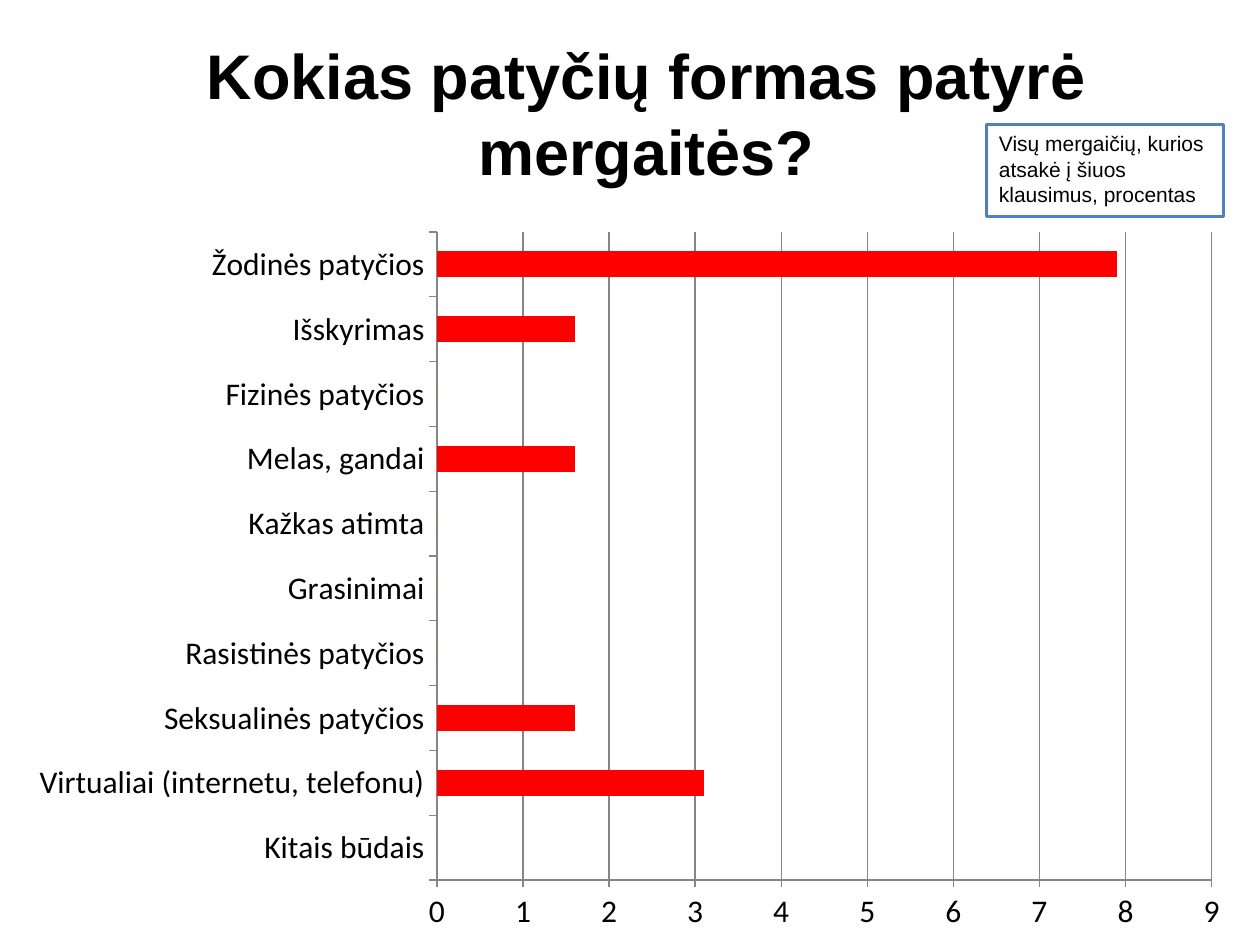
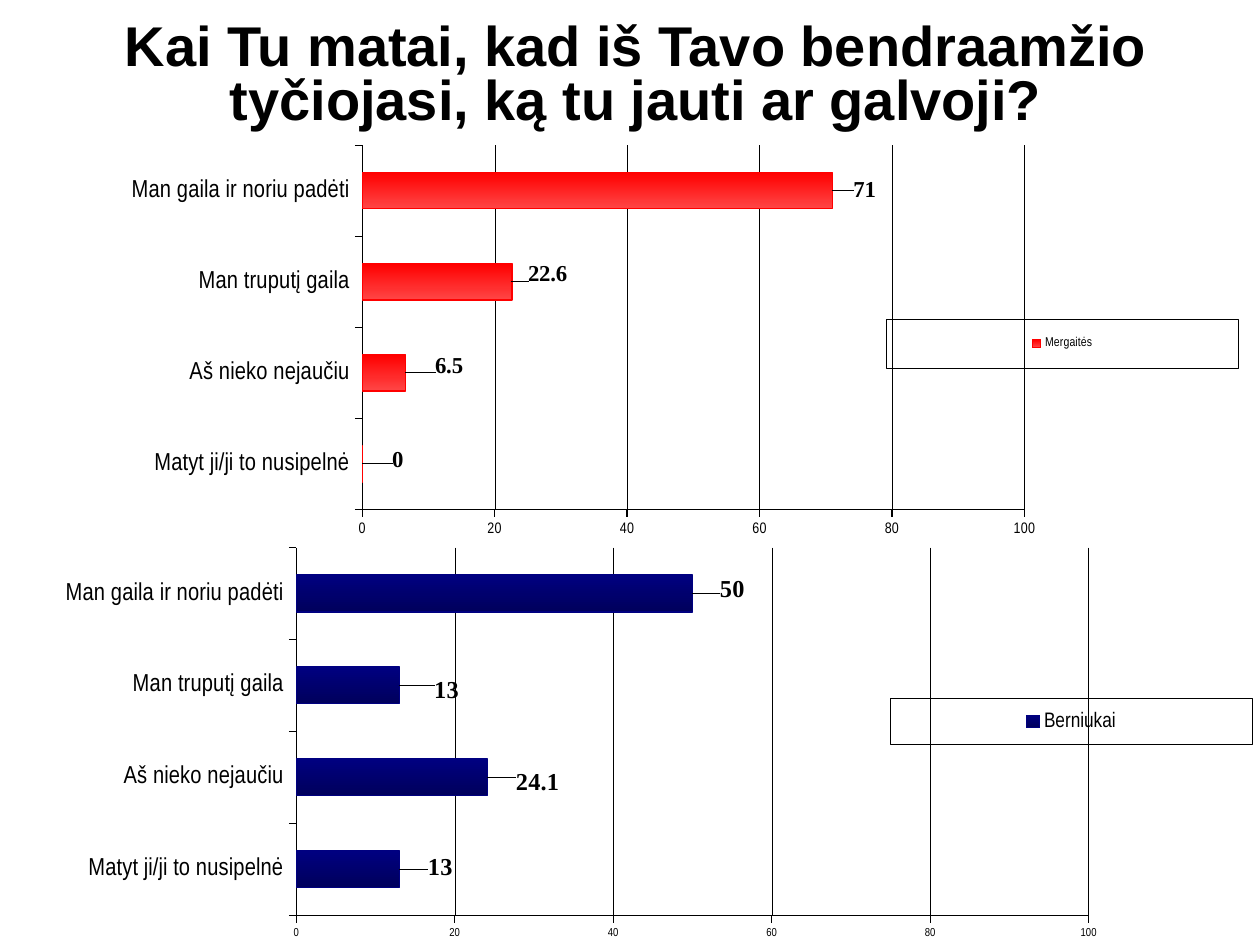
from dataclasses import dataclass

from pptx import Presentation
from pptx.chart.data import CategoryChartData
from pptx.dml.color import RGBColor
from pptx.enum.chart import (XL_CHART_TYPE, XL_LABEL_POSITION, XL_LEGEND_POSITION,
                             XL_TICK_LABEL_POSITION, XL_TICK_MARK)
from pptx.enum.shapes import MSO_SHAPE
from pptx.enum.text import MSO_ANCHOR, MSO_AUTO_SIZE, PP_ALIGN
from pptx.oxml import parse_xml
from pptx.oxml.ns import nsdecls, qn
from pptx.util import Inches, Pt

BAR = XL_CHART_TYPE.BAR_CLUSTERED
OUTSIDE_END = XL_LABEL_POSITION.OUTSIDE_END
RIGHT = XL_LEGEND_POSITION.RIGHT
LOW = XL_TICK_LABEL_POSITION.LOW
TICK_OUT, TICK_NONE = XL_TICK_MARK.OUTSIDE, XL_TICK_MARK.NONE
RECT = MSO_SHAPE.RECTANGLE
TOP, MIDDLE = MSO_ANCHOR.TOP, MSO_ANCHOR.MIDDLE
LEFT, CENTER = PP_ALIGN.LEFT, PP_ALIGN.CENTER
NO_AUTOFIT = MSO_AUTO_SIZE.NONE

SLIDE_W, SLIDE_H = Inches(10), Inches(7.5)
COLS, ROWS = 100, 75
TITLE_ONLY = 5


@dataclass(frozen=True)
class Theme:
    ink: str = "000000"
    paper: str = "FFFFFF"
    frame: str = "4F81BD"
    axis: str = "868686"
    girls: str = "FF0000"
    girls_end: str = "FF4646"
    boys: str = "000080"
    boys_end: str = "00005C"
    face: str = "Arial"
    chart_face: str = "Calibri"
    axis_face: str = "Arial Narrow"
    label_face: str = "Times New Roman"
    title: float = 36
    long_title: float = 32
    note: float = 12
    chart: float = 18
    category: float = 14


T = Theme()


# Shared helpers
def grid(left, top, width, height):
    """Turn columns and rows of the slide grid into lengths."""
    return [int(n * size / count) for n, size, count in
            ((left, SLIDE_W, COLS), (top, SLIDE_H, ROWS),
             (width, SLIDE_W, COLS), (height, SLIDE_H, ROWS))]


def rgb(color):
    return RGBColor.from_string(color)


def set_attrs(obj, **values):
    for name, value in values.items():
        setattr(obj, name, value)


def set_font(font, face, size, bold=False):
    set_attrs(font, name=face, size=Pt(size), bold=bold)
    font.color.rgb = rgb(T.ink)


def set_line(line, color, width):
    line.color.rgb = rgb(color)
    line.width = Pt(width)


def write(sp, text, size, align, anchor, bold=False, spacing=None):
    tf = sp.text_frame
    set_attrs(tf, word_wrap=True, auto_size=NO_AUTOFIT, vertical_anchor=anchor)
    p = tf.paragraphs[0]
    set_attrs(p, alignment=align, line_spacing=spacing)
    r = p.add_run()
    r.text = text
    set_font(r.font, T.face, size, bold)


def manual_layout(x, y, w=None, h=None, inner=False):
    """Chart layout from percentages; without a size it is an offset."""
    parts = ['<c:layoutTarget val="inner"/>'] if inner else []
    if w is not None:
        parts += ['<c:xMode val="edge"/>', '<c:yMode val="edge"/>']
    parts += [f'<c:{tag} val="{value / 100:.4f}"/>'
              for tag, value in zip("xywh", (x, y, w, h)) if value is not None]
    return parse_xml(f'<c:layout {nsdecls("c")}><c:manualLayout>{"".join(parts)}'
                     '</c:manualLayout></c:layout>')


# Title and note
def add_title(s, text, box, size, spacing=None):
    sp = s.shapes.title
    sp.left, sp.top, sp.width, sp.height = grid(*box)
    write(sp, text, size, CENTER, MIDDLE, True, spacing)


def add_note(s, text, box):
    sp = s.shapes.add_shape(RECT, *grid(*box))
    sp.shadow.inherit = False
    sp.fill.solid()
    sp.fill.fore_color.rgb = rgb(T.paper)
    set_line(sp.line, T.frame, 2)
    write(sp, text, T.note, LEFT, TOP)


# Bar chart with its axes
def add_bars(s, box, name, rows, plot_area, top_value, step, line, width):
    """Draw rows from top to bottom; the chart itself counts from the bottom."""
    data = CategoryChartData()
    data.categories = [label for label, _ in reversed(rows)]
    data.add_series(name, [value for _, value in reversed(rows)])
    chart = s.shapes.add_chart(BAR, *grid(*box), data).chart
    set_attrs(chart, has_title=False, has_legend=False)
    set_attrs(chart.plots[0], gap_width=150, vary_by_categories=False)

    for axis in (chart.category_axis, chart.value_axis):
        set_attrs(axis, major_tick_mark=TICK_OUT, minor_tick_mark=TICK_NONE)
        set_line(axis.format.line, line, width)
    axis = chart.value_axis
    set_attrs(axis, minimum_scale=0, maximum_scale=top_value, major_unit=step,
              has_major_gridlines=True)
    set_line(axis.major_gridlines.format.line, line, width)

    root = chart.element if hasattr(chart, "element") else chart._chartSpace
    body = root.find(qn("c:chart"))
    body.addnext(parse_xml(f'<c:spPr {nsdecls("c", "a")}><a:noFill/>'
                           '<a:ln><a:noFill/></a:ln></c:spPr>'))
    area = body.find(qn("c:plotArea"))
    for old in area.findall(qn("c:layout")):
        area.remove(old)
    area.insert(0, manual_layout(*plot_area, inner=True))
    return chart


# Labelled group chart: gradient bars, moved labels, framed legend
def add_group_chart(s, group):
    chart = add_bars(s, group["box"], group["name"],
                     list(zip(FEELINGS, group["values"])), group["plot"],
                     100, 20, T.ink, 0.2)
    set_font(chart.font, T.label_face, group["label_size"], True)
    cat, val = chart.category_axis, chart.value_axis
    cat.tick_label_position = LOW
    set_font(cat.tick_labels.font, T.axis_face, T.category)
    set_font(val.tick_labels.font, T.axis_face, group["scale_size"])
    set_line(val.format.line, T.ink, 0.75)

    ser = chart.plots[0].series[0]
    fill = ser.format.fill
    fill.gradient()
    fill.gradient_angle = 270
    for stop, color in zip(fill.gradient_stops, group["colors"]):
        stop.color.rgb = rgb(color)
    set_line(ser.format.line, group["colors"][0], 0.75)

    for i, shift in enumerate(reversed(group["label_shifts"])):
        label = ser.points[i].data_label
        label.position = OUTSIDE_END
        set_font(label.font, T.label_face, group["label_size"], True)
    for d_lbl, shift in zip(ser._element.iter(qn("c:dLbl")),
                            reversed(group["label_shifts"])):
        d_lbl.find(qn("c:idx")).addnext(manual_layout(*shift))

    chart.has_legend = True
    legend = chart.legend
    set_attrs(legend, position=RIGHT, include_in_layout=False)
    set_font(legend.font, T.axis_face, group["legend_size"])
    el = legend._element
    for old in el.findall(qn("c:layout")):
        el.remove(old)
    el.find(qn("c:legendPos")).addnext(manual_layout(*group["legend"]))
    el.find(qn("c:overlay")).addnext(parse_xml(
        f'<c:spPr {nsdecls("c", "a")}><a:noFill/><a:ln w="2540"><a:solidFill>'
        f'<a:srgbClr val="{T.ink}"/></a:solidFill></a:ln></c:spPr>'))


# Content
BULLYING_FORMS = [
    ("Žodinės patyčios", 7.9), ("Išskyrimas", 1.6), ("Fizinės patyčios", 0),
    ("Melas, gandai", 1.6), ("Kažkas atimta", 0), ("Grasinimai", 0),
    ("Rasistinės patyčios", 0), ("Seksualinės patyčios", 1.6),
    ("Virtualiai (internetu, telefonu)", 3.1), ("Kitais būdais", 0),
]
FEELINGS = ["Man gaila ir noriu padėti", "Man truputį gaila",
            "Aš nieko nejaučiu", "Matyt ji/ji to nusipelnė"]
GROUPS = [
    dict(name="Berniukai", values=[50, 13, 24.1, 13], box=(0.4, 41.8, 99.2, 33.2),
         plot=(23.3, 5, 63.4, 87.9), legend=(70.8, 41.1, 29, 11),
         colors=(T.boys, T.boys_end), label_size=13.9, scale_size=6.6, legend_size=12,
         label_shifts=[(1.8, -1.2), (2.4, 1), (1.9, 1), (1.9, -0.5)]),
    dict(name="Mergaitės", values=[71, 22.6, 6.5, 0], box=(0, 11.5, 98.8, 31.2),
         plot=(29.1, 0, 53.2, 92.8), legend=(71.2, 44.3, 28.3, 12.5),
         colors=(T.girls, T.girls_end), label_size=13, scale_size=8.7, legend_size=7.3,
         label_shifts=[(1.3, 0), (0.9, -2), (2, -1.8), (2, -1)]),
]


# Slides
def forms_slide(prs):
    s = prs.slides.add_slide(prs.slide_layouts[TITLE_ONLY])
    add_title(s, "Kokias patyčių formas patyrė mergaitės?", (14.6, 0, 73.4, 17.8), T.title)
    add_note(s, "Visų mergaičių, kurios atsakė į šiuos klausimus, procentas",
             (78.3, 9.9, 18.8, 7.3))
    chart = add_bars(s, (1.2, 17.2, 97.6, 57.8), "Series 1", BULLYING_FORMS,
                     (34.3, 2.1, 63, 89), 9, 1, T.axis, 0.75)
    set_font(chart.font, T.chart_face, T.chart)
    fill = chart.plots[0].series[0].format.fill
    fill.solid()
    fill.fore_color.rgb = rgb(T.girls)


def feelings_slide(prs):
    s = prs.slides.add_slide(prs.slide_layouts[TITLE_ONLY])
    add_title(s, "Kai Tu matai, kad iš Tavo bendraamžio tyčiojasi, ką tu jauti ar galvoji?",
              (5.9, 0, 89.2, 12.3), T.long_title, 0.8)
    for group in GROUPS:
        add_group_chart(s, group)


def main():
    prs = Presentation()
    set_attrs(prs, slide_width=SLIDE_W, slide_height=SLIDE_H)
    forms_slide(prs)
    feelings_slide(prs)
    prs.save("out.pptx")


if __name__ == "__main__":
    main()
